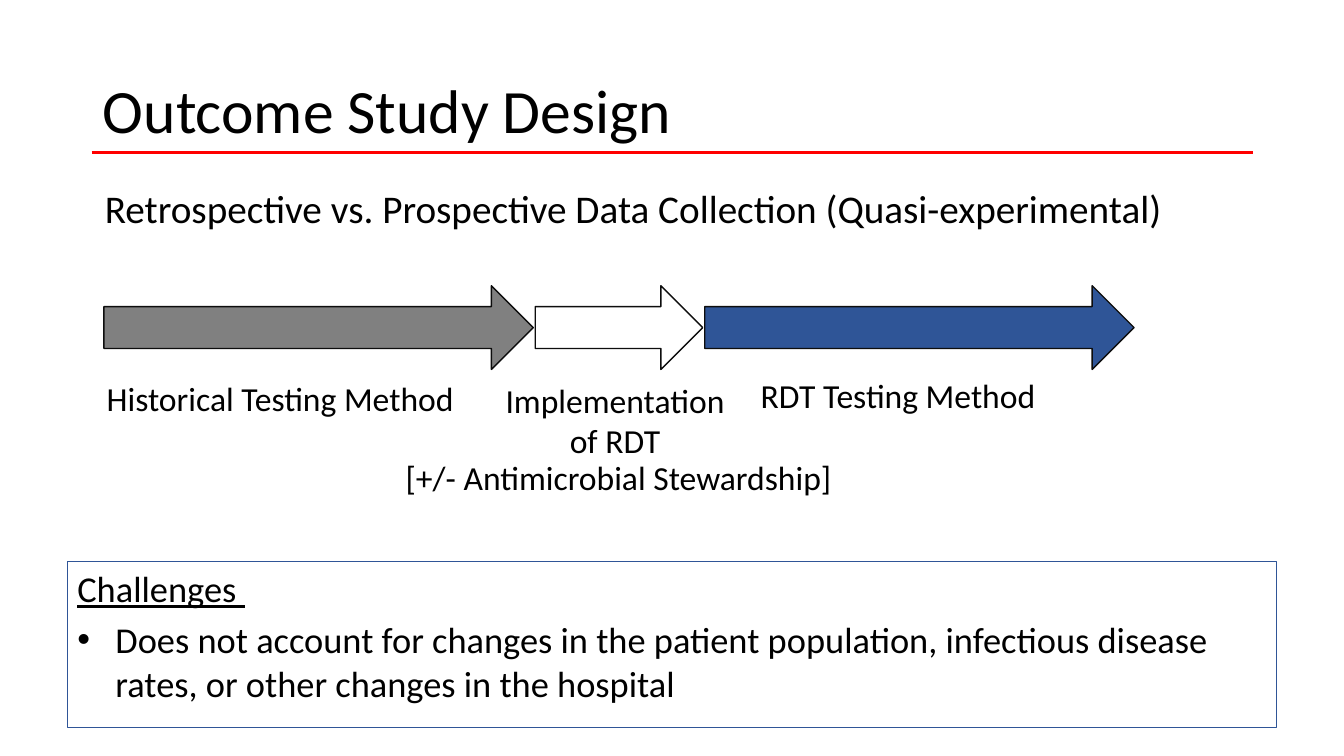
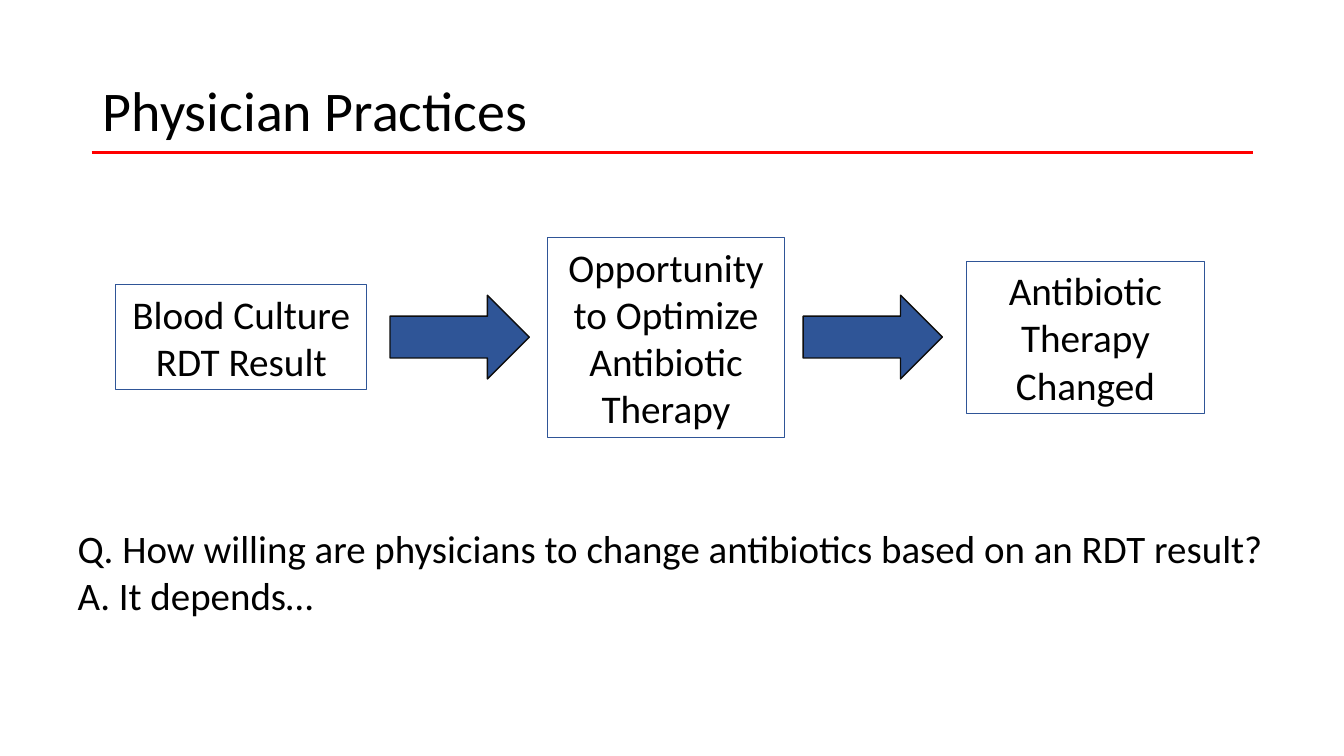
from lxml.etree import SubElement
from pptx import Presentation
from pptx.dml.color import RGBColor
from pptx.enum.shapes import MSO_CONNECTOR, MSO_SHAPE
from pptx.enum.text import MSO_ANCHOR, MSO_AUTO_SIZE, PP_ALIGN
from pptx.oxml.ns import qn
from pptx.util import Cm, Pt

FONT = "Calibri"
BLACK, OUTLINE, RED = "000000", "0D0D0D", "FF0000"
GREY, BLUE = "808080", "2F5597"
MARGIN, WIDE = 1.7, 30.48  # shared by the full-width text areas


def color(value):
    return RGBColor.from_string(value)


def lengths(*values):
    return [Cm(value) for value in values]


def set_bullet(para, mark=None, indent=0.0):
    """Give the paragraph a hanging bullet, or remove the inherited one."""
    props = para._p.get_or_add_pPr()
    props.set("marL", str(Cm(indent)))
    props.set("indent", str(-Cm(indent)))
    if mark:
        SubElement(props, qn("a:buFont"), typeface="Arial")
        SubElement(props, qn("a:buChar"), char=mark)
    else:
        SubElement(props, qn("a:buNone"))


def write(shape, lines, size, align=PP_ALIGN.LEFT, anchor=MSO_ANCHOR.TOP,
          spacing=None, before=0):
    """Fill the shape with one paragraph per line and return the paragraphs."""
    frame = shape.text_frame
    frame.word_wrap = True
    frame.auto_size = MSO_AUTO_SIZE.NONE
    frame.vertical_anchor = anchor
    frame.text = "\n".join(lines)
    for para in frame.paragraphs:
        para.alignment = align
        para.line_spacing = spacing
        para.space_before = Pt(before)
        para.font.name = FONT
        para.font.size = Pt(size)
        para.font.color.rgb = color(BLACK)
    return frame.paragraphs


def place(shape, box):
    shape.left, shape.top, shape.width, shape.height = lengths(*box)


def add_titled_page(deck, title, size):
    """Add a page with its title and the red rule under it."""
    page = deck.slides.add_slide(deck.slide_layouts[1])
    place(page.shapes.title, (2.34, 1.02, 29.21, 3.68))
    write(page.shapes.title, [title], size, anchor=MSO_ANCHOR.MIDDLE, spacing=0.9)
    rule = page.shapes.add_connector(MSO_CONNECTOR.STRAIGHT,
                                     *lengths(2.31, 3.84, 31.57, 3.84))
    rule.line.color.rgb = color(RED)
    rule.line.width = Pt(2.25)
    SubElement(rule._element.spPr, qn("a:effectLst"))
    return page


def fill_body(page, box, lines, size, spacing):
    body = page.placeholders[1]
    place(body, box)
    for para in write(body, lines, size, spacing=spacing, before=10):
        set_bullet(para)


def add_outlined(page, kind, box, line, weight, fill=None):
    shape = page.shapes.add_shape(kind, *lengths(*box))
    shape.shadow.inherit = False
    if fill:
        shape.fill.solid()
        shape.fill.fore_color.rgb = color(fill)
    else:
        shape.fill.background()
    shape.line.color.rgb = color(line)
    shape.line.width = Pt(weight)
    return shape


def add_arrow(page, left, top, width, fill=None):
    box = (left, top, width, 2.11)
    add_outlined(page, MSO_SHAPE.RIGHT_ARROW, box, OUTLINE, 1, fill)


def add_frame(page, box):
    return add_outlined(page, MSO_SHAPE.RECTANGLE, box, BLUE, 0.75)


def add_timeline(page, left, top):
    """Three study periods as touching arrows, with captions below."""
    gap, start = 0.05, left
    for width, fill in ((10.82, GREY), (4.22, None), (10.82, BLUE)):
        add_arrow(page, start, top, width, fill)
        start += width + gap
    captions = (
        (-0.18, 2.2, 10, ["Historical Testing Method"], PP_ALIGN.LEFT),
        (9.68, 2.25, 6.4, ["Implementation", "of RDT"], PP_ALIGN.CENTER),
        (16.3, 2.12, 8, ["RDT Testing Method"], PP_ALIGN.LEFT),
        (7.13, 4.18, 11.68, ["[+/- Antimicrobial Stewardship]"], PP_ALIGN.CENTER),
    )
    for across, down, width, lines, align in captions:
        caption = page.shapes.add_textbox(
            *lengths(left + across, top + down, width, 1.27 * len(lines)))
        write(caption, lines, 24, align)


def add_challenges(page, box):
    lines = ["Challenges ",
             "Does not account for changes in the patient population, "
             "infectious disease rates, or other changes in the hospital"]
    heading, item = write(add_frame(page, box), lines, 26, before=5.2)
    heading.font.underline = True
    set_bullet(item, "•", 0.96)


def add_process(page, left, middle):
    """Boxes and arrows in a row, all centred on one height."""
    steps = (
        (0, 6.32, 2.64, "Blood Culture RDT Result"),
        (10.87, 5.99, 5.05, "Opportunity to Optimize Antibiotic Therapy"),
        (21.44, 5.99, 3.84, "Antibiotic Therapy Changed"),
    )
    for across, width, height, text in steps:
        frame = add_frame(page, (left + across, middle - height / 2, width, height))
        write(frame, [text], 28, PP_ALIGN.CENTER, MSO_ANCHOR.MIDDLE)
    for across in (6.91, 17.32):
        add_arrow(page, left + across, middle - 1.06, 3.51, BLUE)


def build_study_design(deck):
    page = add_titled_page(deck, "Outcome Study Design", 44)
    fill_body(page, (2.39, 4.65, 28.88, 2.4),
              ["Retrospective vs. Prospective Data Collection (Quasi-experimental)"],
              28, 0.9)
    add_timeline(page, 2.62, 7.2)
    add_challenges(page, (MARGIN, 14.15, WIDE, 4.19))


def build_practices(deck):
    page = add_titled_page(deck, "Physician Practices", 40)
    add_process(page, 2.92, 8.5)
    fill_body(page, (MARGIN, 13.41, WIDE, 3.18),
              ["Q. How willing are physicians to change antibiotics based on an RDT result?",
               "A. It depends…"], 27.8, 0.7)


def main():
    deck = Presentation()
    deck.slide_width, deck.slide_height = lengths(33.87, 19.05)
    build_study_design(deck)
    build_practices(deck)
    deck.save("out.pptx")


if __name__ == "__main__":
    main()
